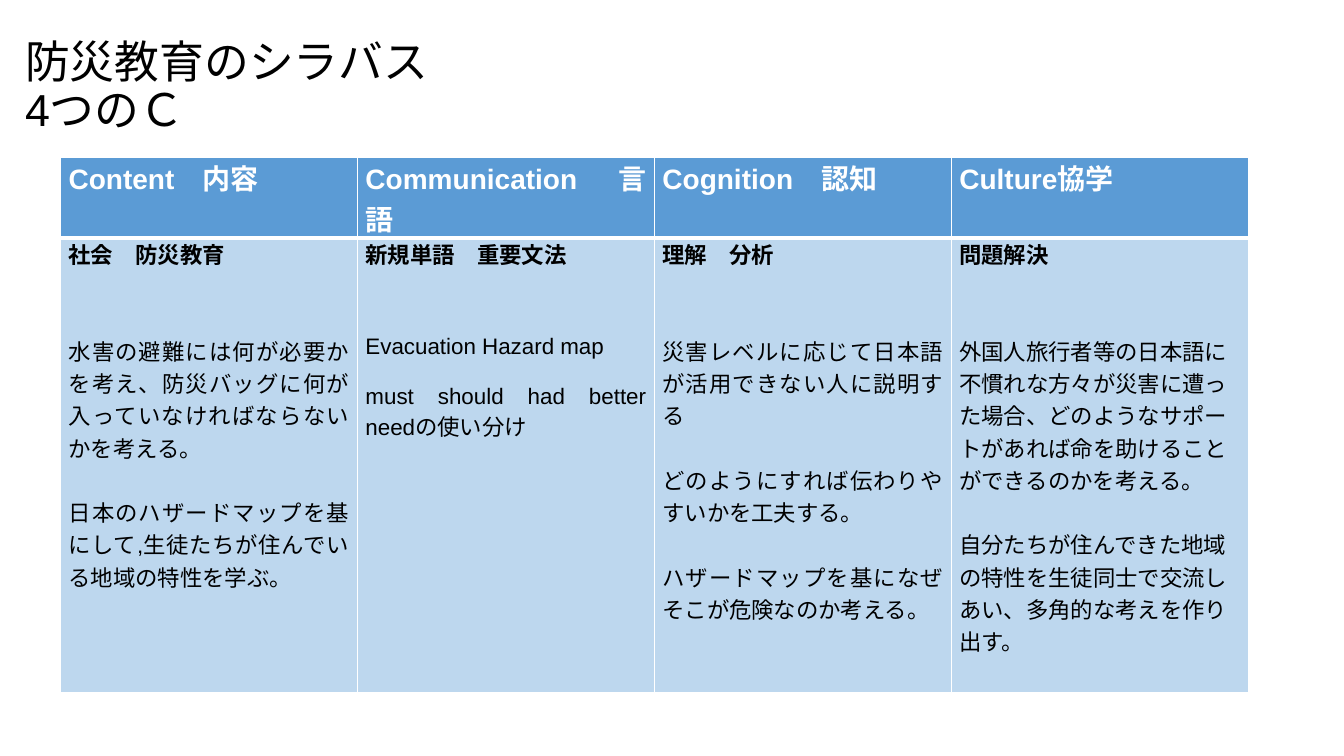
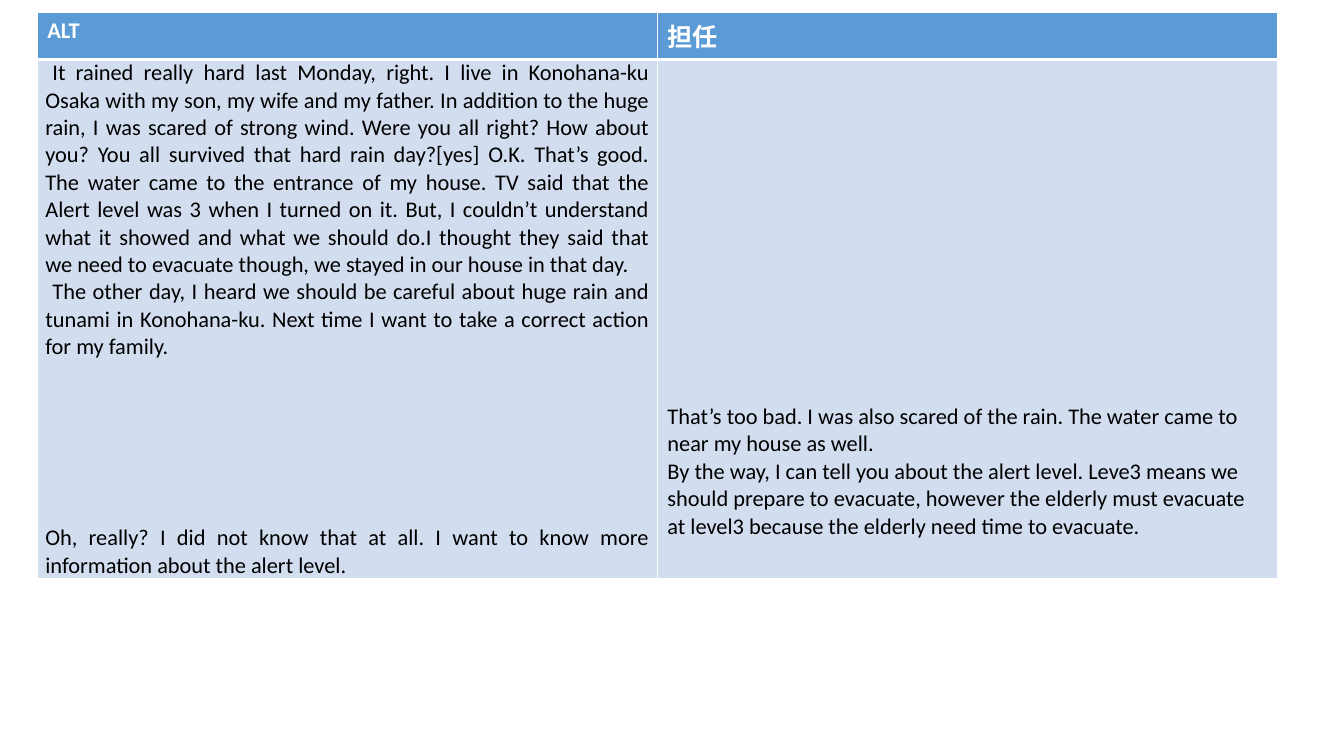
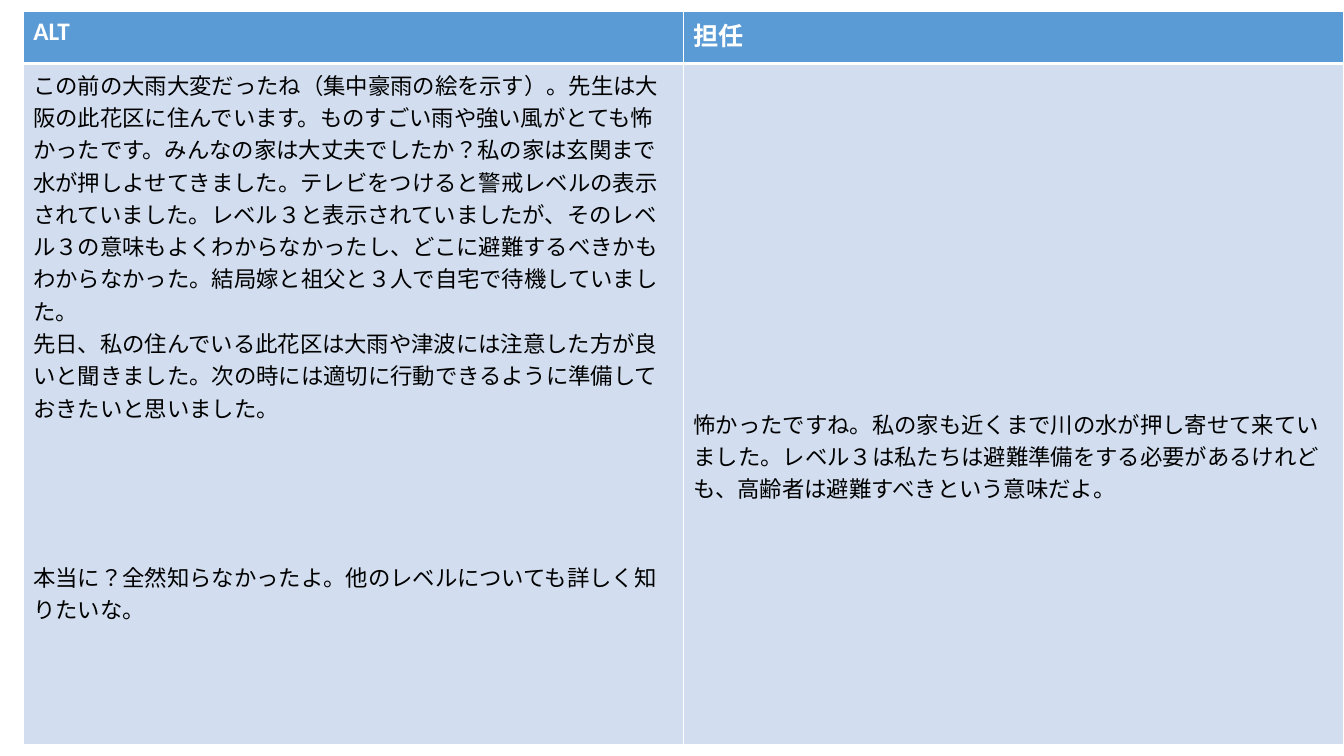
from dataclasses import dataclass

from lxml import etree
from pptx import Presentation
from pptx.dml.color import RGBColor
from pptx.enum.lang import MSO_LANGUAGE_ID as Lang
from pptx.enum.text import MSO_ANCHOR, PP_ALIGN
from pptx.oxml.ns import qn
from pptx.util import Inches, Pt

HEADER_FILL = "5B9BD5"
CONTENT_FILL = "BDD7EE"
DIALOGUE_FILL = "D2DEEF"
WHITE = "FFFFFF"
BLACK = "000000"
BODY_SIZE = 16
SNUG = (0.08, 0)
ROOMY = (0.1, 0.05)
LEFT, JUSTIFY = PP_ALIGN.LEFT, PP_ALIGN.JUSTIFY
HEADER_BORDERS = {"a:lnL": 1, "a:lnR": 1, "a:lnT": 1, "a:lnB": 3}
BODY_BORDERS = {"a:lnL": 1, "a:lnR": 1, "a:lnT": 3, "a:lnB": 1}


@dataclass
class Para:
    """One paragraph; gap is the space before it in points."""
    text: str
    gap: float = 0
    size: float = BODY_SIZE
    bold: bool = False
    align: PP_ALIGN = LEFT
    indent: float = 0


def rgb(code):
    return RGBColor.from_string(code)


def style_run(run, size, font, color, bold=False):
    run.font.size = Pt(size)
    run.font.name = font
    run.font.color.rgb = rgb(color)
    run.font.bold = bold
    run.font.language_id = Lang.JAPANESE


def set_borders(cell, borders):
    """Draw white borders; they must stand before the fill in the cell XML."""
    properties = cell._tc.get_or_add_tcPr()
    for position, (side, width) in enumerate(borders.items()):
        line = etree.Element(qn(side), w=str(Pt(width)))
        solid = etree.SubElement(line, qn("a:solidFill"))
        etree.SubElement(solid, qn("a:srgbClr"), val=WHITE)
        properties.insert(position, line)


def fill_cell(cell, paras, fill, font, color, insets=ROOMY, drop=0):
    """Write paras into the cell, the first one lowered by drop inches."""
    side, edge = insets
    cell.margin_left = cell.margin_right = Inches(side)
    cell.margin_top = Inches(edge + drop)
    cell.margin_bottom = Inches(edge)
    cell.fill.solid()
    cell.fill.fore_color.rgb = rgb(fill)
    set_borders(cell, HEADER_BORDERS if fill == HEADER_FILL else BODY_BORDERS)
    frame = cell.text_frame
    for number, para in enumerate(paras):
        paragraph = frame.add_paragraph() if number else frame.paragraphs[0]
        paragraph.text = para.text
        paragraph.alignment = para.align
        paragraph.space_before = Pt(para.gap)
        if para.indent:
            paragraph._p.get_or_add_pPr().set("indent", str(Inches(para.indent)))
        for run in paragraph.runs:
            style_run(run, para.size, font, color, para.bold)


def add_grid(slide, box, columns, row_heights):
    """Add a two-row table with equal columns; box is left, top, width."""
    left, top, width = map(Inches, box)
    grid = slide.shapes.add_table(2, columns, left, top, width,
                                  Inches(sum(row_heights))).table
    grid.horz_banding = False
    for column in grid.columns:
        column.width = int(width / columns)
    for row, height in zip(grid.rows, row_heights):
        row.height = Inches(height)
    return grid


def add_title(slide, box, lines):
    title = slide.shapes.add_textbox(*map(Inches, box)).text_frame
    title.word_wrap = True
    title.vertical_anchor = MSO_ANCHOR.MIDDLE
    paragraph = title.paragraphs[0]
    paragraph.line_spacing = 0.9
    for number, (text, font) in enumerate(lines):
        if number:
            paragraph.add_line_break()
        run = paragraph.add_run()
        run.text = text
        style_run(run, 32, font, BLACK)


def add_syllabus_table(slide, box, row_heights, columns):
    """Each column is a header, a topic and (text, gap, alignment) items."""
    grid = add_grid(slide, box, len(columns), row_heights)
    for index, (header, topic, items) in enumerate(columns):
        heading = Para(header, size=20, bold=True, align=JUSTIFY)
        fill_cell(grid.cell(0, index), [heading], HEADER_FILL, "Arial", WHITE, SNUG)
        paras = [Para(topic, bold=True, align=JUSTIFY)]
        paras += [Para(text, gap, align=align) for text, gap, align in items]
        fill_cell(grid.cell(1, index), paras, CONTENT_FILL, "Arial", BLACK, SNUG)


def add_dialogue_table(slide, box, row_heights, alt_size, alt_lines, alt_insets,
                       teacher_lines):
    """ALT speaks on the left; the teacher's reply starts lower on the right."""
    grid = add_grid(slide, box, 2, row_heights)
    for index, (speaker, size) in enumerate((("ALT", alt_size), ("担任", 18))):
        fill_cell(grid.cell(0, index), [Para(speaker, size=size, bold=True)],
                  HEADER_FILL, "Calibri", WHITE)
    fill_cell(grid.cell(1, 0), alt_lines, DIALOGUE_FILL, "Calibri", BLACK, alt_insets)
    fill_cell(grid.cell(1, 1), [Para(line) for line in teacher_lines],
              DIALOGUE_FILL, "Calibri", BLACK, drop=3.36)


SYLLABUS = [
    ("Content　内容", "社会　防災教育", [
        ("水害の避難には何が必要かを考え、防災バッグに何が入っていなければならないかを考える。", 46, JUSTIFY),
        ("日本のハザードマップを基にして,生徒たちが住んでいる地域の特性を学ぶ。", 23, JUSTIFY)]),
    ("Communication　言語", "新規単語　重要文法", [
        ("Evacuation Hazard map", 46, JUSTIFY),
        ("must should had better needの使い分け", 18, JUSTIFY)]),
    ("Cognition　認知", "理解　分析", [
        ("災害レベルに応じて日本語が活用できない人に説明する", 46, JUSTIFY),
        ("どのようにすれば伝わりやすいかを工夫する。", 23, JUSTIFY),
        ("ハザードマップを基になぜそこが危険なのか考える。", 23, JUSTIFY)]),
    ("Culture協学", "問題解決", [
        ("外国人旅行者等の日本語に不慣れな方々が災害に遭った場合、どのようなサポートがあれば命を助けることができるのかを考える。", 46, LEFT),
        ("自分たちが住んできた地域の特性を生徒同士で交流しあい、多角的な考えを作り出す。", 23, LEFT)]),
]

ALT_ENGLISH = [
    Para("It rained really hard last Monday, right. I live in Konohana-ku Osaka with my son, "
         "my wife and my father. In addition to the huge rain, I was scared of strong wind. "
         "Were you all right? How about you? You all survived that hard rain day?[yes] O.K. "
         "That’s good. The water came to the entrance of my house. TV said that the Alert "
         "level was 3 when I turned on it. But, I couldn’t understand what it showed and what "
         "we should do.I thought they said that we need to evacuate though, we stayed in our "
         "house in that day.", align=JUSTIFY, indent=0.07),
    Para("The other day, I heard we should be careful about huge rain and tunami in "
         "Konohana-ku. Next time I want to take a correct action for my family.",
         align=JUSTIFY, indent=0.07),
    Para("Oh, really? I did not know that at all. I want to know more information about the "
         "alert level.", gap=117, align=JUSTIFY),
]
TEACHER_ENGLISH = [
    "That’s too bad. I was also scared of the rain. The water came to near my house as well.",
    "By the way, I can tell you about the alert level. Leve3 means we should prepare to "
    "evacuate, however the elderly must evacuate at level3 because the elderly need time to "
    "evacuate.",
]

ALT_JAPANESE = [
    Para("この前の大雨大変だったね（集中豪雨の絵を示す）。先生は大阪の此花区に住んでいます。"
         "ものすごい雨や強い風がとても怖かったです。みんなの家は大丈夫でしたか？"
         "私の家は玄関まで水が押しよせてきました。テレビをつけると警戒レベルの表示されていました。"
         "レベル３と表示されていましたが、そのレベル３の意味もよくわからなかったし、"
         "どこに避難するべきかもわからなかった。結局嫁と祖父と３人で自宅で待機していました。"),
    Para("先日、私の住んでいる此花区は大雨や津波には注意した方が良いと聞きました。"
         "次の時には適切に行動できるように準備しておきたいと思いました。"),
    Para("本当に？全然知らなかったよ。他のレベルについても詳しく知りたいな。", gap=98),
]
TEACHER_JAPANESE = [
    "怖かったですね。私の家も近くまで川の水が押し寄せて来ていました。"
    "レベル３は私たちは避難準備をする必要があるけれども、高齢者は避難すべきという意味だよ。",
]


def main():
    deck = Presentation()
    deck.slide_width, deck.slide_height = Inches(13.33), Inches(7.5)
    syllabus, english, japanese = (
        deck.slides.add_slide(deck.slide_layouts[6]) for _ in range(3))

    add_title(syllabus, (0.15, 0.15, 11.5, 1.45),
              [("防災教育のシラバス", "TeX Gyre Schola"), ("4つのＣ", "Arial")])
    add_syllabus_table(syllabus, (0.6, 1.56, 11.78), (0.8, 4.51), SYLLABUS)
    add_dialogue_table(english, (0.37, 0.12, 12.3), (0.47, 5.15), 16,
                       ALT_ENGLISH, SNUG, TEACHER_ENGLISH)
    add_dialogue_table(japanese, (0.23, 0.11, 13.1), (0.52, 6.76), 18,
                       ALT_JAPANESE, ROOMY, TEACHER_JAPANESE)
    deck.save("out.pptx")


if __name__ == "__main__":
    main()
